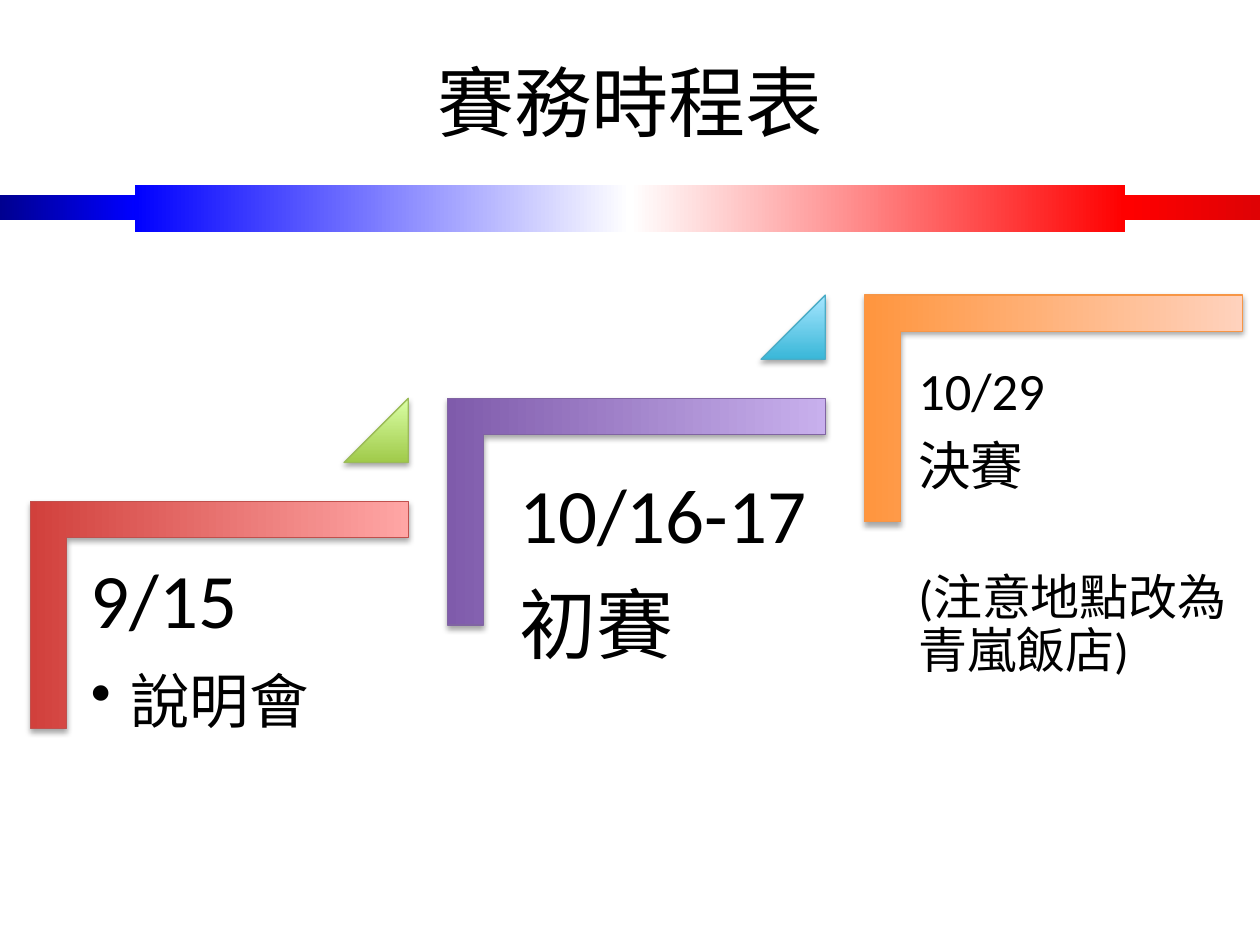
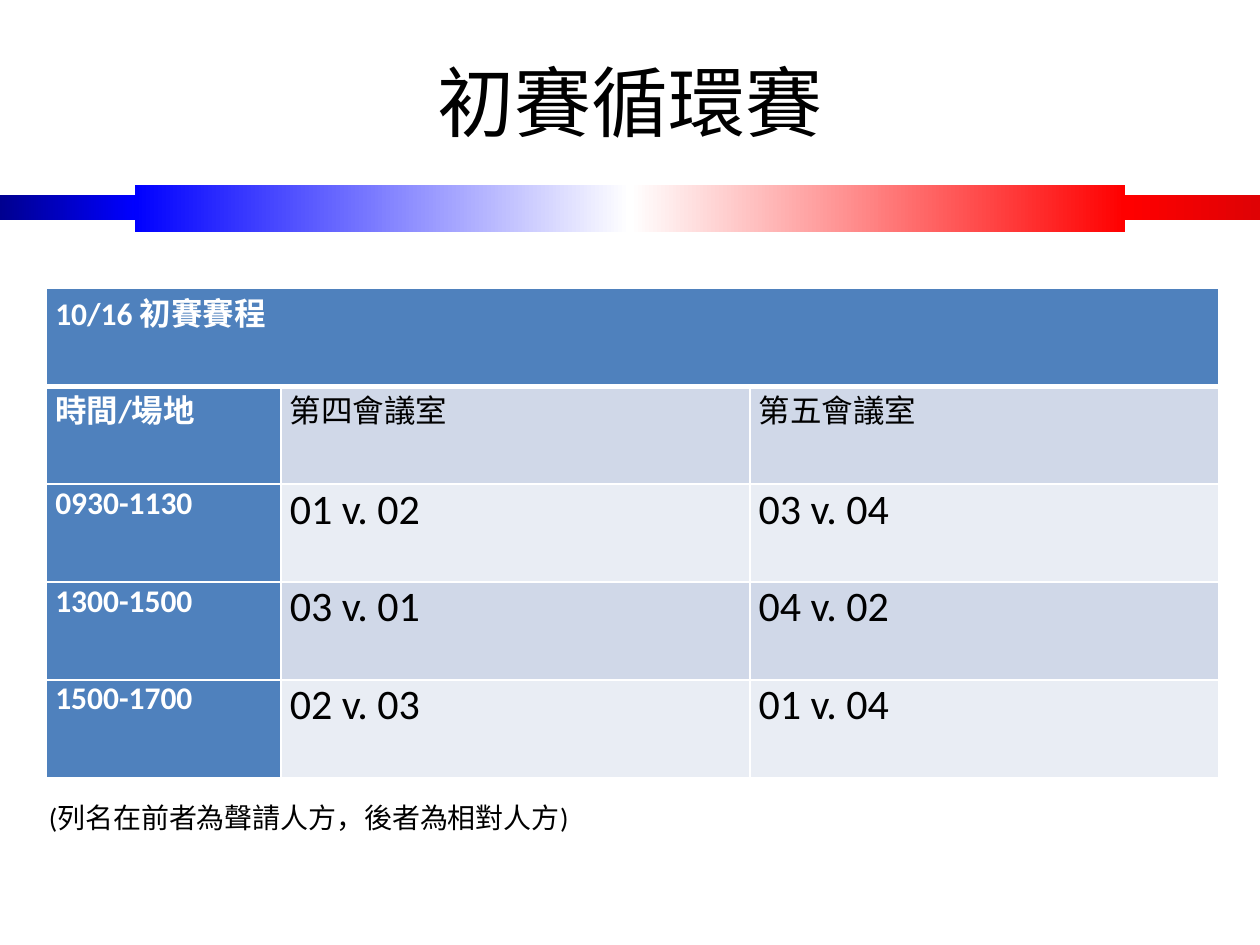
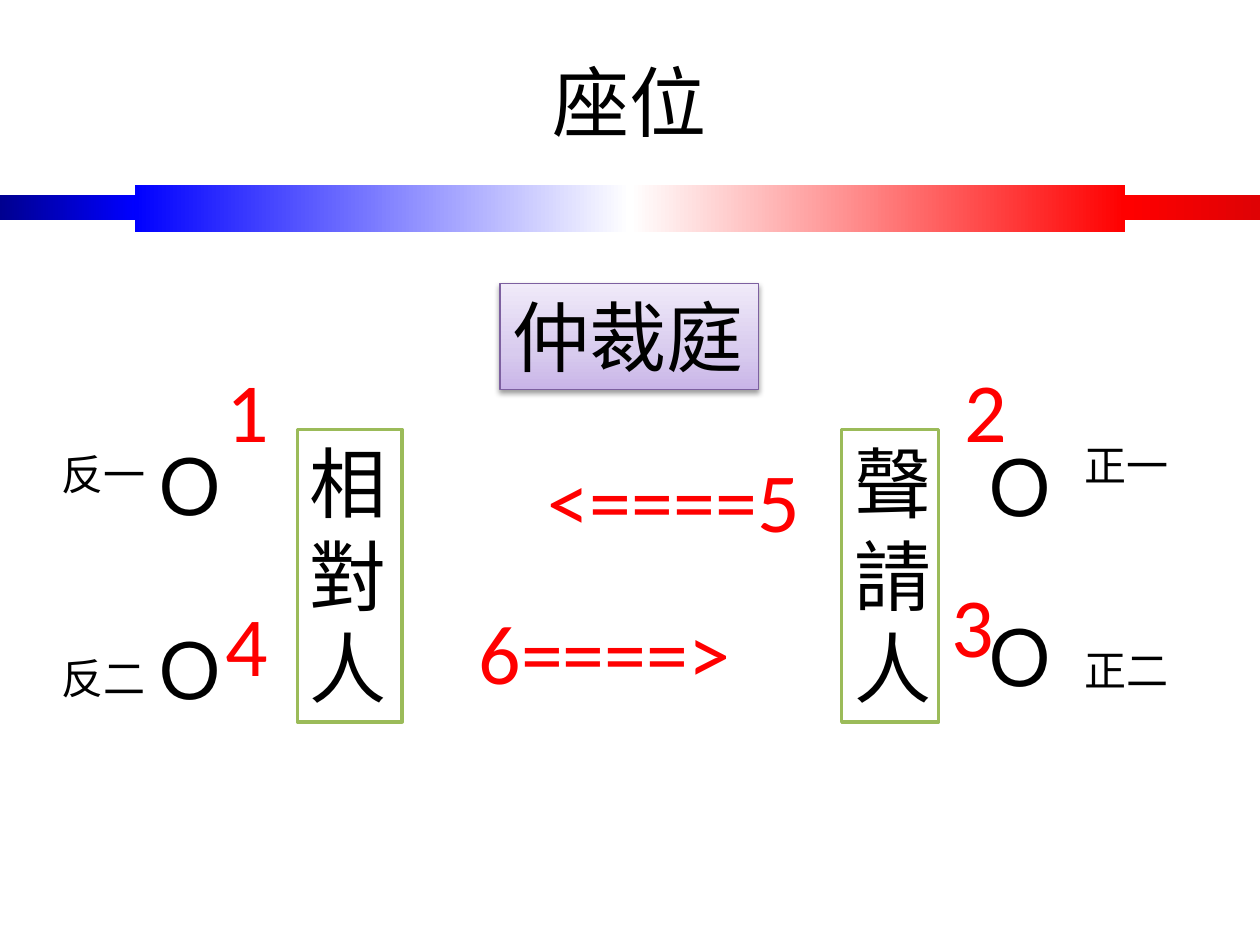
import pptx
import pptx.dml.color
import pptx.enum.shapes
import pptx.enum.text
import pptx.oxml
import pptx.oxml.ns
import pptx.util

Pt = pptx.util.Pt
SHAPE = pptx.enum.shapes.MSO_SHAPE
ANCHOR = pptx.enum.text.MSO_ANCHOR
ALIGN = pptx.enum.text.PP_ALIGN
qn = pptx.oxml.ns.qn
NS = pptx.oxml.ns.nsdecls("a")

COLORS = {
    "ink": "000000", "white": "FFFFFF", "alert": "FF0000",
    "navy": "000090", "blue": "0000FF", "red": "FF0000", "dark_red": "DF0205",
    "head": "4F81BD", "band": "D0D8E8", "pale": "E9EDF4",
    "brick": "D1403C", "pink": "FFA6A5", "brick_edge": "C0504D",
    "violet": "7F5BAB", "lilac": "C8B0ED", "violet_edge": "8064A2",
    "orange": "FF953E", "peach": "FFD2BD", "orange_edge": "F79646",
    "green": "A0CA4A", "lime": "DAFFA5", "green_edge": "9BBB59",
    "teal": "39B7D8", "sky": "A7E6FF", "teal_edge": "4BACC6",
    "court_low": "C9B5E8", "court_mid": "D8CBEE", "court_top": "F0EAF9",
    "court_edge": "7D60A0",
}
BODY = {"name": "Calibri", "size": Pt(44), "bold": False}
SIDES = ("margin_left", "margin_top", "margin_right", "margin_bottom")


# Formatting helpers
def rgb(color):
    return pptx.dml.color.RGBColor.from_string(COLORS[color])


def apply(target, values):
    for attribute, value in values.items():
        setattr(target, attribute, value)


def write(paragraph, text, color="ink", **font):
    run = paragraph.add_run()
    run.text = text
    apply(run.font, {**BODY, **font})
    run.font.color.rgb = rgb(color)


def paint_gradient(shape, stops, angle):
    """Fill with (position, color) stops; the angle runs counter-clockwise."""
    shape.fill.gradient()
    shape.fill.gradient_angle = angle
    stop_list = shape._element.spPr.find(qn("a:gradFill")).find(qn("a:gsLst"))
    for stop in list(stop_list):
        stop_list.remove(stop)
    for position, color in stops:
        stop_list.append(pptx.oxml.parse_xml(
            f'<a:gs {NS} pos="{position * 1000}"><a:srgbClr val="{COLORS[color]}"/></a:gs>'))


def outline(shape, color, width):
    shape.line.color.rgb = rgb(color)
    shape.line.width = Pt(width)


def cast_shadow(shape, opacity=35):
    shape.shadow.inherit = False
    shape._element.spPr.find(qn("a:effectLst")).append(pptx.oxml.parse_xml(
        f'<a:outerShdw {NS} blurRad="{Pt(3.15)}" dist="{Pt(1.8)}" dir="5400000" rotWithShape="0">'
        f'<a:srgbClr val="{COLORS["ink"]}"><a:alpha val="{opacity * 1000}"/></a:srgbClr>'
        '</a:outerShdw>'))


def add_preset(slide, kind, left, top, width, height):
    shape = slide.shapes.add_shape(kind, Pt(left), Pt(top), Pt(width), Pt(height))
    shape.shadow.inherit = False
    return shape


def add_label(slide, box, text, color="ink", wrap=False, anchor=ANCHOR.TOP, align=None, **font):
    label = slide.shapes.add_textbox(*map(Pt, box))
    apply(label.text_frame, {"word_wrap": wrap, "vertical_anchor": anchor})
    paragraph = label.text_frame.paragraphs[0]
    paragraph.alignment = align
    write(paragraph, text, color, **font)
    return label


# Title and tricolour band shared by all slides
def add_themed_slide(deck, title):
    slide = deck.slides.add_slide(deck.slide_layouts[6])
    side, full = 77, 720
    bands = [
        (side, 105.8, full - 2 * side, 26.6, [(0, "blue"), (50, "white"), (100, "red")]),
        (0, 111.6, side, 14.4, [(0, "navy"), (100, "blue")]),
        (full - side, 111.6, side, 14.4, [(0, "red"), (100, "dark_red")]),
    ]
    for *box, stops in bands:
        band = add_preset(slide, SHAPE.RECTANGLE, *box)
        paint_gradient(band, stops, 0)
        band.line.fill.background()
    add_label(slide, (36, 21.6, 648, 71.3), title, wrap=True, anchor=ANCHOR.MIDDLE,
              align=ALIGN.CENTER, name="Times New Roman")
    return slide


# One stair of the schedule: bracket, caption and marker of the next stair
def add_step(slide, left, top, step):
    width, height = 216, 129.6
    shift = (width - height) / 2
    bracket = add_preset(slide, SHAPE.CORNER, left + shift, top - shift, height, width)
    bracket.rotation = 90
    bracket.adjustments[0] = bracket.adjustments[1] = 0.16
    low, high, edge = step["bracket"]
    paint_gradient(bracket, [(0, low), (100, high)], 90)
    outline(bracket, edge, 0.75)
    cast_shadow(bracket)

    dx, dy = step["offset"]
    caption = slide.shapes.add_textbox(Pt(left + dx), Pt(top + dy), Pt(194.4), Pt(170.6))
    frame = caption.text_frame
    apply(frame, {"word_wrap": True, **dict.fromkeys(SIDES, Pt(step["inset"]))})
    for index, (text, size, after, extra) in enumerate(step["lines"]):
        paragraph = frame.add_paragraph() if index else frame.paragraphs[0]
        apply(paragraph, {"line_spacing": 0.9, "space_after": Pt(after)})
        if "before" in extra:
            paragraph.space_before = Pt(extra["before"])
        if "bullet" in extra:
            properties = paragraph._p.get_or_add_pPr()
            properties.set("marL", str(Pt(22.5)))
            properties.set("indent", str(-Pt(22.5)))
            properties.append(pptx.oxml.parse_xml(f'<a:buChar {NS} char="{extra["bullet"]}"/>'))
        write(paragraph, text, size=Pt(size))

    if "marker" in step:
        marker = add_preset(slide, SHAPE.ISOSCELES_TRIANGLE, left + 179.3, top - 59, 36.7, 36.7)
        marker.adjustments[0] = 1
        low, high, edge = step["marker"]
        paint_gradient(marker, [(0, low), (100, high)], 90)
        outline(marker, edge, 0.75)
        cast_shadow(marker)


def build_schedule(deck):
    slide = add_themed_slide(deck, "賽務時程表")
    steps = [
        {"bracket": ("brick", "pink", "brick_edge"), "marker": ("green", "lime", "green_edge"),
         "offset": (21.6, 21.6), "inset": 13,
         "lines": [("9/15", 44, 15.4, {}), ("說明會", 34, 5.1, {"bullet": "•"})]},
        {"bracket": ("violet", "lilac", "violet_edge"), "marker": ("teal", "sky", "teal_edge"),
         "offset": (28.1, 31.7), "inset": 13,
         "lines": [("10/16-17", 44, 15.4, {}), ("初賽", 44, 15.4, {})]},
        {"bracket": ("orange", "peach", "orange_edge"),
         "offset": (22.3, 31.7), "inset": 8.6,
         "lines": [("10/29", 30, 10.5, {}), ("決賽", 30, 10.5, {}),
                   ("(注意地點改為青嵐飯店)", 28, 9.8, {"before": 33})]},
    ]
    for index, step in enumerate(steps):
        add_step(slide, 17.3 + 238.3 * index, 286.6 - 59 * index, step)


# Match table
def border_cell(cell, bottom):
    properties = cell._tc.get_or_add_tcPr()
    widths = {"lnL": 1, "lnR": 1, "lnT": 1, "lnB": bottom}
    for index, (side, width) in enumerate(widths.items()):
        properties.insert(index, pptx.oxml.parse_xml(
            f'<a:{side} {NS} w="{Pt(width)}"><a:solidFill><a:srgbClr val="{COLORS["white"]}"/>'
            f'</a:solidFill></a:{side}>'))


def add_match_table(slide, left, top, rows):
    widths, row_height = (134, 268, 268), 55.9
    frame = slide.shapes.add_table(len(rows), len(widths), Pt(left), Pt(top),
                                   Pt(sum(widths)), Pt(row_height * len(rows)))
    matches = frame.table
    for column, width in zip(matches.columns, widths):
        column.width = Pt(width)
    for r, texts in enumerate(rows):
        matches.rows[r].height = Pt(row_height)
        for c, text in enumerate(texts):
            cell = matches.cell(r, c)
            is_head = r == 0 or c == 0
            apply(cell, dict(zip(SIDES, (Pt(5), 0, Pt(5), 0))))
            cell.fill.solid()
            cell.fill.fore_color.rgb = rgb("head" if is_head else "band" if r % 2 else "pale")
            border_cell(cell, bottom=1 if r else 3)
            if text:
                write(cell.text_frame.paragraphs[0], text, "white" if is_head else "ink",
                      size=Pt(18 if is_head or r == 1 else 24), bold=is_head)
    matches.cell(0, 0).merge(matches.cell(0, len(widths) - 1))


def build_round_robin(deck):
    slide = add_themed_slide(deck, "初賽循環賽")
    add_match_table(slide, 26.6, 164.9, [
        ("10/16 初賽賽程", "", ""),
        ("時間/場地", "第四會議室", "第五會議室"),
        ("0930-1130", "01 v. 02", "03 v. 04"),
        ("1300-1500", "03 v. 01", "04 v. 02"),
        ("1500-1700", "02 v. 03", "01 v. 04"),
    ])
    add_label(slide, (20.9, 453.6, 315.4, 26.6), "(列名在前者為聲請人方，後者為相對人方)",
              wrap=True, anchor=ANCHOR.MIDDLE, size=Pt(16))


# Seating: one party's table, its two seats and their names
def add_party(slide, top, party, table_left, table_width, seat_left, seat_tops, name_box, names):
    desk = add_label(slide, (table_left, top, table_width, 167), party, wrap=True)
    desk.fill.solid()
    desk.fill.fore_color.rgb = rgb("white")
    outline(desk, "green_edge", 2)
    for seat_top in seat_tops:
        add_label(slide, (seat_left, top + seat_top, 59, 60.5), "Ｏ")
    name_left, name_top = name_box
    speakers = add_label(slide, (name_left, top + name_top, 63.4, 152.6), names[0], size=Pt(24))
    second = speakers.text_frame.add_paragraph()
    second.space_before = Pt(88)
    write(second, names[1], size=Pt(24))


def build_seating(deck):
    slide = add_themed_slide(deck, "座位")
    court = add_label(slide, (285.8, 162, 147.6, 60.5), "仲裁庭")
    paint_gradient(court, [(0, "court_low"), (35, "court_mid"), (100, "court_top")], 90)
    outline(court, "court_edge", 0.75)
    cast_shadow(court, 38)

    add_party(slide, 245.5, "聲請人", 481, 55.4, 553.7, (2.2, 99.4), (612.7, 2.2), ("正一", "正二"))
    add_party(slide, 245.5, "相對人", 170, 59.8, 79.2, (1.5, 106.6), (28.1, 7.2), ("反一", "反二"))

    # Speaking order
    turns = [
        ("1", 122.4, 201.6, 38.9), ("2", 544.3, 201.6, 38.9),
        ("3", 536.4, 324, 38.9), ("4", 121.7, 334.8, 38.9),
        ("<====5", 306, 252.7, 159.8), ("6====>", 266.4, 339.8, 159.8),
    ]
    for turn, left, top, width in turns:
        add_label(slide, (left, top, width, 65.5), turn, "alert", size=Pt(48))


def main():
    deck = pptx.Presentation()
    apply(deck, {"slide_width": Pt(720), "slide_height": Pt(540)})
    for build in (build_schedule, build_round_robin, build_seating):
        build(deck)
    deck.save("out.pptx")


if __name__ == "__main__":
    main()
